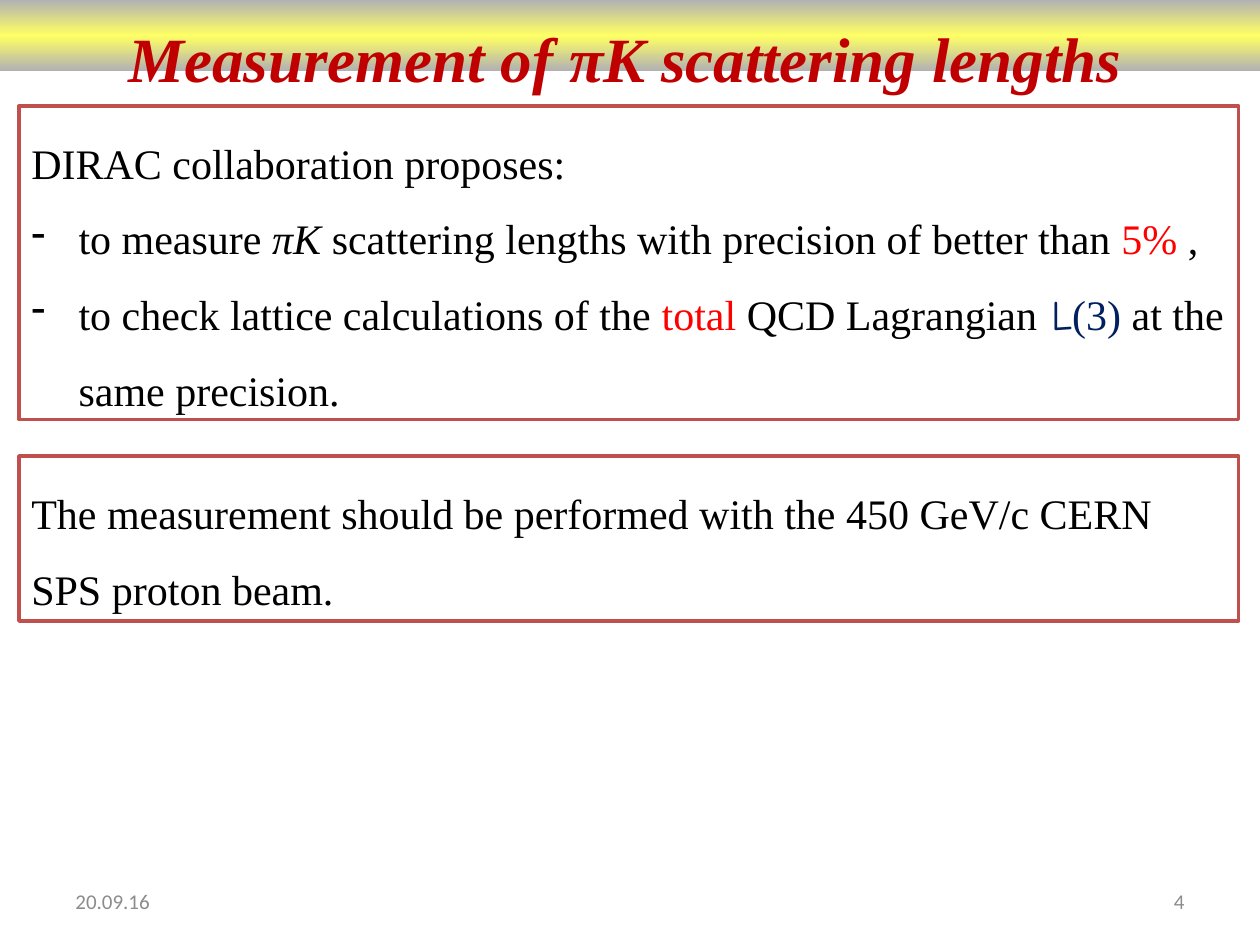
from copy import deepcopy

from lxml import etree
from pptx import Presentation
from pptx.dml.color import RGBColor
from pptx.enum.shapes import MSO_SHAPE
from pptx.enum.text import MSO_ANCHOR, PP_ALIGN
from pptx.oxml.ns import qn
from pptx.util import Pt

RECTANGLE = MSO_SHAPE.RECTANGLE
TOP, MIDDLE = MSO_ANCHOR.TOP, MSO_ANCHOR.MIDDLE
LEFT, CENTER, RIGHT = PP_ALIGN.LEFT, PP_ALIGN.CENTER, PP_ALIGN.RIGHT

COLORS = {
    "white": "FFFFFF",
    "black": "000000",
    "border": "C0504D",
    "title": "C00000",
    "red": "FF0000",
    "navy": "002060",
    "footer": "8C8C8C",
    "silver": "B2B2B2",
    "yellow": "FFFF66",
}
SERIF, SANS, SCRIPT = "Times New Roman", "Calibri", "Comic Neue"


class SlideBuilder:
    """Holds the style and the current slide, and adds each kind of element."""

    body_size = 24
    bullet_indent = 27

    def __init__(self, slide):
        self.slide = slide

    def color(self, name):
        return RGBColor.from_string(COLORS[name])

    def run(self, paragraph, text, color="black", font=SERIF, size=body_size,
            bold=False, italic=False):
        run = paragraph.add_run()
        run.text = text
        run.font.name = font
        run.font.size = Pt(size)
        run.font.bold = bold
        run.font.italic = italic
        run.font.color.rgb = self.color(color)

    def rectangle(self, left, top, width, height):
        shape = self.slide.shapes.add_shape(
            RECTANGLE, Pt(left), Pt(top), Pt(width), Pt(height))
        shape.shadow.inherit = False
        return shape

    def band(self, left, top, width, height, edge, middle):
        shape = self.rectangle(left, top, width, height)
        shape.line.fill.background()
        shape.fill.gradient()
        shape.fill.gradient_angle = 270
        first_stop = shape.fill._fill._gradFill.gsLst[0]
        first_stop.addnext(deepcopy(first_stop))
        for stop, position, name in zip(
                shape.fill.gradient_stops, (0, 0.5, 1), (edge, middle, edge)):
            stop.position = position
            stop.color.rgb = self.color(name)

    def bullet(self, paragraph, character):
        properties = paragraph._p.get_or_add_pPr()
        properties.set("marL", str(Pt(self.bullet_indent)))
        properties.set("indent", str(-Pt(self.bullet_indent)))
        etree.SubElement(properties, qn("a:buChar")).set("char", character)

    def panel(self, top, height, paragraphs):
        shape = self.rectangle(10.8, top, 697, height)
        shape.fill.solid()
        shape.fill.fore_color.rgb = self.color("white")
        shape.line.color.rgb = self.color("border")
        shape.line.width = Pt(2)
        frame = shape.text_frame
        frame.word_wrap = True
        frame.vertical_anchor = TOP
        for index, (bulleted, runs) in enumerate(paragraphs):
            paragraph = frame.add_paragraph() if index else frame.paragraphs[0]
            paragraph.alignment = LEFT
            paragraph.line_spacing = 1.5
            if bulleted:
                self.bullet(paragraph, "-")
            for text, style in runs:
                self.run(paragraph, text, **style)

    def label(self, left, top, width, height, text, alignment, anchor, wrap=True, **style):
        box = self.slide.shapes.add_textbox(Pt(left), Pt(top), Pt(width), Pt(height))
        frame = box.text_frame
        frame.word_wrap = wrap
        frame.vertical_anchor = anchor
        paragraph = frame.paragraphs[0]
        paragraph.alignment = alignment
        self.run(paragraph, text, **style)


def main():
    presentation = Presentation()
    presentation.slide_width, presentation.slide_height = Pt(720), Pt(540)
    slide = presentation.slides.add_slide(presentation.slide_layouts[6])
    builder = SlideBuilder(slide)

    red, navy = {"color": "red"}, {"color": "navy"}
    builder.panel(60.5, 179.3, [
        (False, [("DIRAC collaboration proposes:", {})]),
        (True, [
            ("to measure ", {}),
            ("πK ", {"italic": True}),
            ("scattering lengths with precision of better than ", {}),
            ("5% ", red),
            (",", {}),
        ]),
        (True, [
            ("to check lattice calculations of the ", {}),
            ("total ", red),
            ("QCD Lagrangian", {}),
            (" L", {"color": "navy", "font": SCRIPT}),
            ("(3) ", navy),
            ("at the same precision.", {}),
        ]),
    ])
    builder.panel(260.6, 94.3, [
        (False, [("The measurement should be performed with the 450 GeV/c CERN "
                  "SPS proton beam.", {})]),
    ])

    footer = {"color": "footer", "font": SANS, "size": 12}
    builder.label(36, 500.5, 168, 28.75, "20.09.16", LEFT, MIDDLE, **footer)
    builder.label(516, 500.5, 168, 28.75, "4", RIGHT, MIDDLE, **footer)

    builder.band(0, 0, 720, 40.5, "silver", "yellow")
    builder.label(59.5, 7.5, 595.5, 36, "Measurement of πK scattering lengths",
                  CENTER, TOP, wrap=False, color="title", size=36, bold=True, italic=True)

    presentation.save("out.pptx")


if __name__ == "__main__":
    main()
